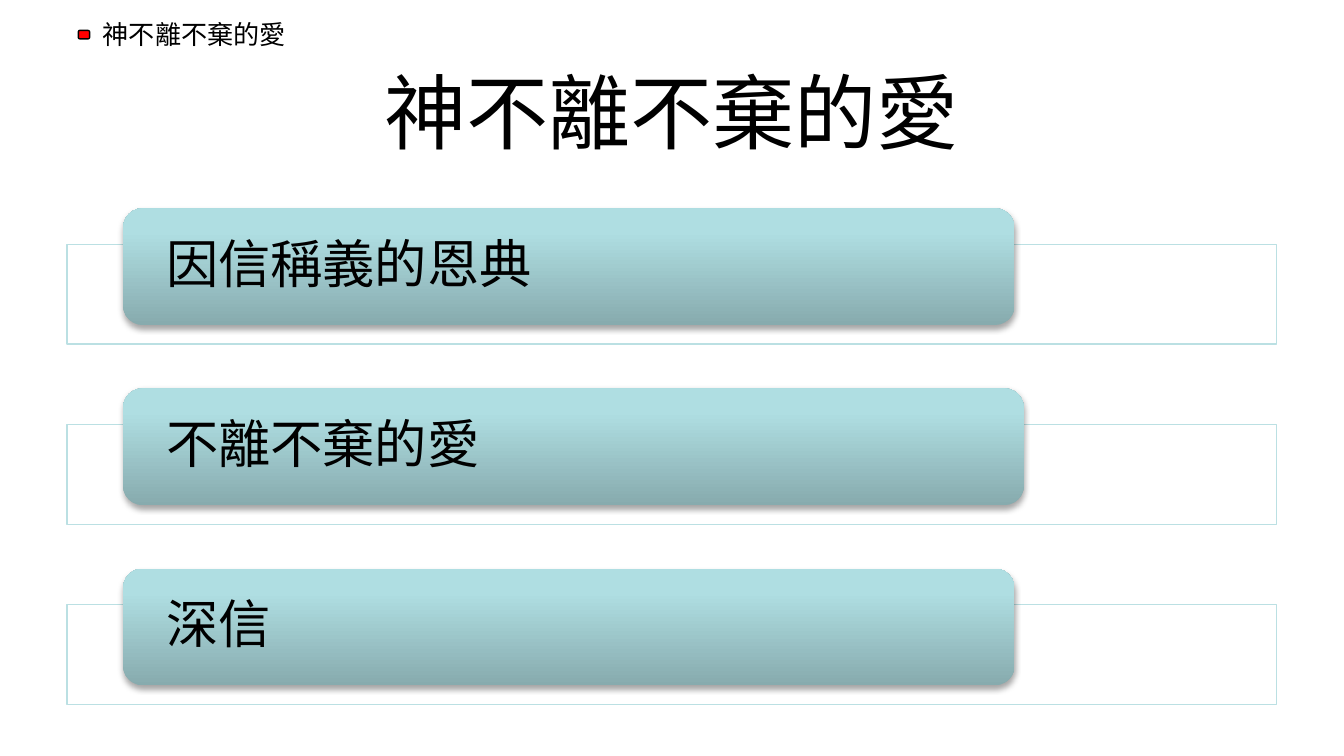
from lxml.etree import SubElement
from pptx import Presentation
from pptx.dml.color import RGBColor
from pptx.enum.shapes import MSO_SHAPE
from pptx.enum.text import MSO_ANCHOR, PP_ALIGN
from pptx.oxml import parse_xml
from pptx.oxml.ns import nsdecls, qn
from pptx.util import Pt

BLACK = RGBColor(0x00, 0x00, 0x00)
WHITE = RGBColor(0xFF, 0xFF, 0xFF)
RED = RGBColor(0xFF, 0x00, 0x00)
PALE_TEAL = RGBColor(0xBB, 0xE0, 0xE3)
BAR_STOPS = [
    (0, RGBColor(0x87, 0xAB, 0xAE)),
    (80, RGBColor(0xAF, 0xDE, 0xE2)),
    (100, RGBColor(0xAF, 0xE0, 0xE4)),
]
FONT = "Roboto"
TOPIC = "神不離不棄的愛"


class SlideBuilder:
    def __init__(self, slide):
        self.slide = slide

    def set_text(self, shape, text, size, align=PP_ALIGN.LEFT, anchor=MSO_ANCHOR.TOP):
        frame = shape.text_frame
        frame.text = text
        frame.word_wrap = True
        frame.vertical_anchor = anchor
        para = frame.paragraphs[0]
        para.alignment = align
        span = para.runs[0]
        span.font.size = Pt(size)
        span.font.name = FONT
        span.font.color.rgb = BLACK
        # East Asian characters use the same font
        SubElement(span.font._element, qn("a:ea")).set("typeface", FONT)
        return para

    def text(self, left, top, width, height, text, size, **layout):
        box = self.slide.shapes.add_textbox(Pt(left), Pt(top), Pt(width), Pt(height))
        self.set_text(box, text, size, **layout)

    def shape(self, kind, left, top, width, height, fill=None, line=None):
        shape = self.slide.shapes.add_shape(
            kind, Pt(left), Pt(top), Pt(width), Pt(height))
        shape.shadow.inherit = False
        if fill is not None:
            shape.fill.solid()
            shape.fill.fore_color.rgb = fill
        if line is None:
            shape.line.fill.background()
        else:
            shape.line.color.rgb = line
            shape.line.width = Pt(0.75)
        return shape

    def frame(self, left, top, width, height):
        frame = self.shape(
            MSO_SHAPE.RECTANGLE, left, top, width, height, WHITE, PALE_TEAL)
        color = frame._element.spPr.find(qn("a:solidFill"))[0]
        SubElement(color, qn("a:alpha")).set("val", "90000")

    def bar(self, left, top, width, height, text):
        bar = self.shape(MSO_SHAPE.ROUNDED_RECTANGLE, left, top, width, height)
        properties = bar._element.spPr
        # Vertical gradient, dark at the bottom
        stops = "".join(
            f'<a:gs pos="{position * 1000}"><a:srgbClr val="{color}"/></a:gs>'
            for position, color in BAR_STOPS)
        properties.find(qn("a:prstGeom")).addnext(parse_xml(
            f'<a:gradFill {nsdecls("a")} rotWithShape="1"><a:gsLst>{stops}</a:gsLst>'
            '<a:lin ang="16200000" scaled="0"/></a:gradFill>'))
        # Soft shadow below
        properties.find(qn("a:effectLst")).append(parse_xml(
            f'<a:outerShdw {nsdecls("a")} blurRad="{Pt(3.1)}" dist="{Pt(1.8)}"'
            ' dir="5400000" rotWithShape="0">'
            f'<a:srgbClr val="{BLACK}"><a:alpha val="35000"/></a:srgbClr>'
            '</a:outerShdw>'))
        para = self.set_text(bar, text, 28, anchor=MSO_ANCHOR.MIDDLE)
        para.line_spacing = 0.9
        frame = bar.text_frame
        frame.margin_left = frame.margin_right = Pt(20)
        frame.margin_top = frame.margin_bottom = 0


def main():
    deck = Presentation()
    deck.slide_width, deck.slide_height = Pt(720), Pt(405)
    page = SlideBuilder(deck.slides.add_slide(deck.slide_layouts[6]))

    # Running header with its marker
    page.text(48, 6.5, 294, 24.5, TOPIC, 14)
    page.shape(MSO_SHAPE.ROUNDED_RECTANGLE, 42, 16.3, 6, 4.5, RED, BLACK)

    # Title
    page.text(36, 25.2, 648, 67.7, TOPIC, 44,
              align=PP_ALIGN.CENTER, anchor=MSO_ANCHOR.MIDDLE)

    # Three points, each a bar over an outlined frame
    points = [("因信稱義的恩典", 477.5), ("不離不棄的愛", 482.5), ("深信", 477.5)]
    for index, (point, width) in enumerate(points):
        top = 111.6 + index * 96.5
        page.frame(36, top + 19.3, 648, 53.5)
        page.bar(66, top, width, 62.6, point)

    deck.save("out.pptx")


if __name__ == "__main__":
    main()
